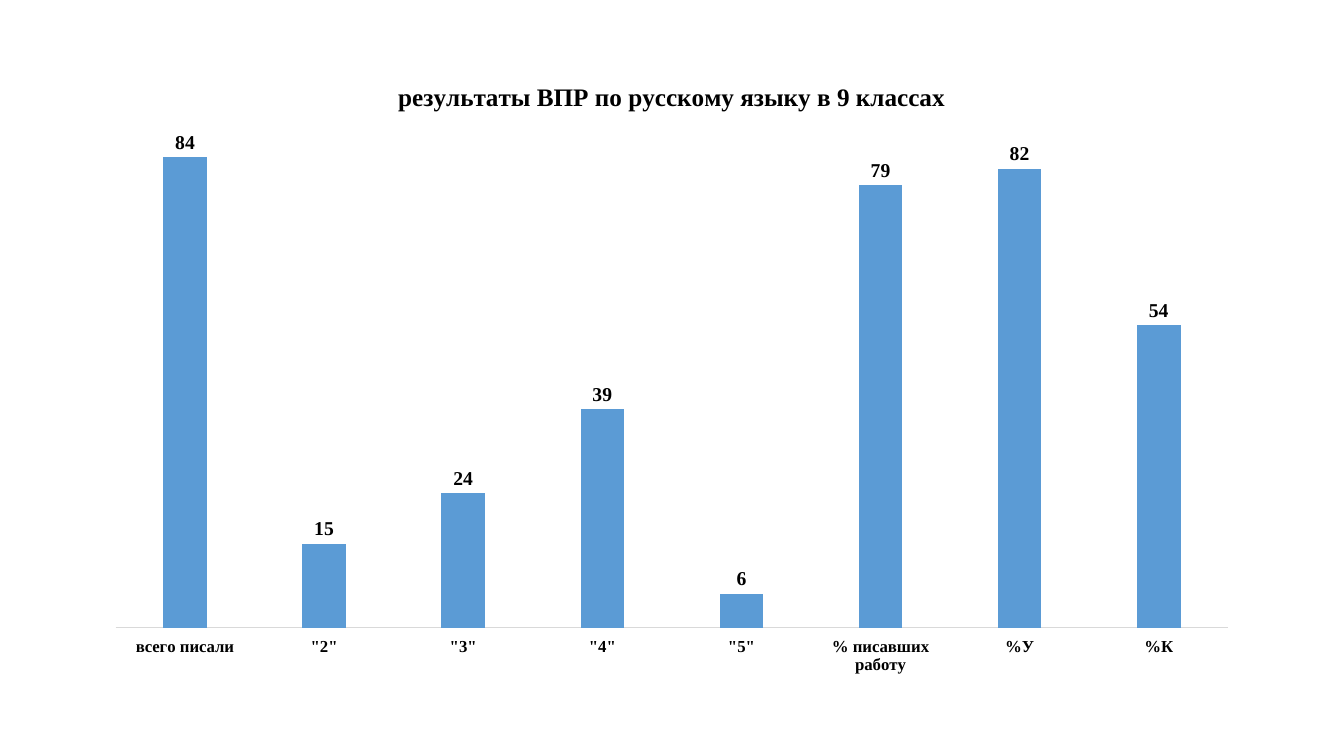
"""Build the slide with the Russian language test results of the ninth forms."""
from dataclasses import dataclass

from lxml import etree
from pptx import Presentation
from pptx.chart.chart import Chart
from pptx.chart.data import CategoryChartData
from pptx.dml.color import RGBColor
from pptx.enum.chart import XL_CHART_TYPE, XL_LABEL_POSITION, XL_TICK_LABEL_POSITION, XL_TICK_MARK
from pptx.text.text import Font
from pptx.util import Pt

COLUMN = XL_CHART_TYPE.COLUMN_CLUSTERED
ABOVE = XL_LABEL_POSITION.OUTSIDE_END
LOW = XL_TICK_LABEL_POSITION.LOW
NO_TICK = XL_TICK_MARK.NONE
CHART_NS = "http://schemas.openxmlformats.org/drawingml/2006/chart"


@dataclass(frozen=True)
class Theme:
    """Colours, fonts and type sizes."""
    ink: str = "000000"
    bar: str = "5B9BD5"
    rule: str = "D9D9D9"
    face: str = "Times New Roman"
    base: str = "Calibri"
    head: float = 18
    label: float = 14
    axis: float = 12


@dataclass(frozen=True)
class Score:
    """One column of the chart."""
    name: str
    value: int


THEME = Theme()
TITLE = "результаты ВПР по русскому языку в 9 классах"
SCORES = (
    Score("всего писали", 84),
    Score('"2"', 15),
    Score('"3"', 24),
    Score('"4"', 39),
    Score('"5"', 6),
    Score("% писавших работу", 79),
    Score("%У", 82),
    Score("%К", 54),
)


def style(font: Font, size: float, face: str = THEME.face, bold: bool = True) -> None:
    """Format a font."""
    font.name, font.size, font.bold = face, Pt(size), bold
    font.color.rgb = RGBColor.from_string(THEME.ink)


def write(frame, text: str, **form) -> None:
    """Put formatted text into a text frame."""
    run = frame.paragraphs[0].add_run()
    run.text = text
    style(run.font, **form)


def place(chart: Chart, tag: str, index: int, **parts: object) -> None:
    """Give a chart part a fixed layout."""
    owner = chart.element.xpath(f".//c:{tag}")[0]
    for old in owner.xpath("./c:layout"):
        owner.remove(old)
    layout = etree.Element(f"{{{CHART_NS}}}layout")
    manual = etree.SubElement(layout, f"{{{CHART_NS}}}manualLayout")
    for key, value in parts.items():
        etree.SubElement(manual, f"{{{CHART_NS}}}{key}", val=str(value))
    owner.insert(index, layout)


def dress(chart: Chart) -> None:
    """Format the axes, columns and labels."""
    style(chart.font, THEME.axis, face=THEME.base, bold=False)
    chart.has_legend = False

    names = chart.category_axis
    style(names.tick_labels.font, THEME.axis)
    names.major_tick_mark = names.minor_tick_mark = NO_TICK
    names.tick_label_position = LOW
    names.format.line.width = Pt(0.75)
    names.format.line.color.rgb = RGBColor.from_string(THEME.rule)

    values = chart.value_axis
    values.minimum_scale, values.maximum_scale = 0, 90
    values.has_major_gridlines = False
    values.visible = False

    plot = chart.plots[0]
    plot.gap_width, plot.overlap = 219, -27
    plot.vary_by_categories = False
    series = plot.series[0]
    series.format.fill.solid()
    series.format.fill.fore_color.rgb = RGBColor.from_string(THEME.bar)
    labels = series.data_labels
    labels.show_value = True
    labels.position = ABOVE
    labels.number_format, labels.number_format_is_linked = "0", False
    style(labels.font, THEME.label)


def main() -> None:
    """Build and save the slide."""
    deck = Presentation()
    deck.slide_width, deck.slide_height = Pt(960), Pt(540)
    slide = deck.slides.add_slide(deck.slide_layouts[6])

    data = CategoryChartData(number_format="0")
    data.categories = [score.name for score in SCORES]
    data.add_series("Series 1", [score.value for score in SCORES])
    chart = slide.shapes.add_chart(COLUMN, Pt(66), Pt(36.7), Pt(828), Pt(450), data).chart

    dress(chart)
    chart.has_title = True
    write(chart.chart_title.text_frame, TITLE, size=THEME.head)
    chart.chart_title.include_in_layout = False
    place(chart, "title", 1, xMode="edge", yMode="edge", x=0.26, y=0.04)
    place(chart, "plotArea", 0, layoutTarget="inner", xMode="edge", yMode="edge",
          x=0.02, y=0.115, w=0.96, h=0.8)
    deck.save("out.pptx")


if __name__ == "__main__":
    main()
